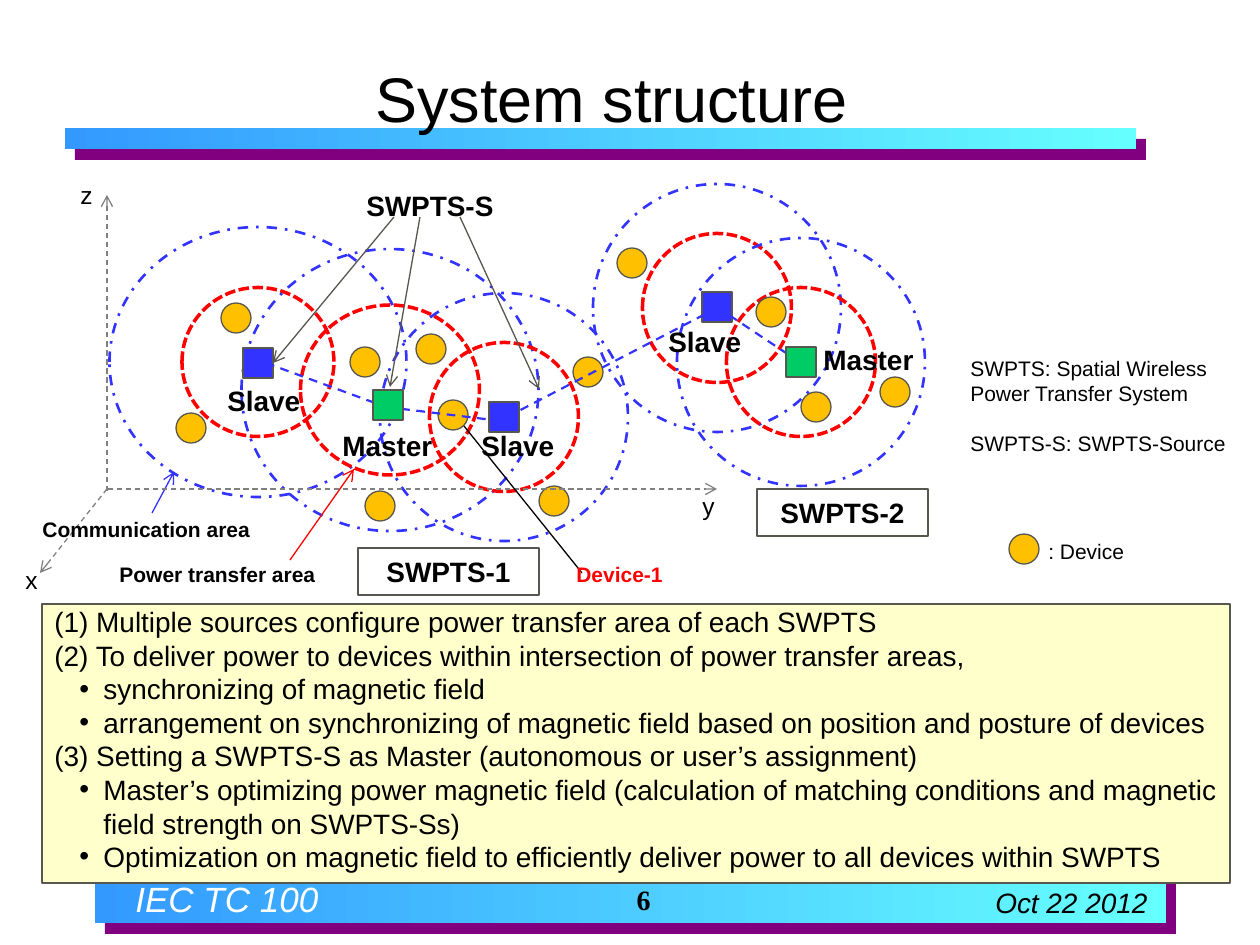
from pptx import Presentation
from pptx.dml.color import RGBColor
from pptx.enum.dml import MSO_LINE
from pptx.enum.shapes import MSO_CONNECTOR, MSO_SHAPE
from pptx.enum.text import MSO_ANCHOR, PP_ALIGN
from pptx.oxml.ns import qn
from pptx.util import Emu, Pt
from lxml.etree import SubElement

PX = 914400 / 126
COLORS = {
    "purple": "800080", "sky": "3399FF", "aqua": "66FFFF", "white": "FFFFFF",
    "black": "000000", "cream": "FFFFCC", "outline": "57564F", "red": "FF0000",
    "blue": "3333FF", "green": "00CC66", "amber": "FFC000", "gray": "808080",
}
RGB = {name: RGBColor.from_string(value) for name, value in COLORS.items()}
RECT, OVAL = MSO_SHAPE.RECTANGLE, MSO_SHAPE.OVAL

presentation = Presentation()
presentation.slide_width = Emu(round(1260 * PX))
presentation.slide_height = Emu(round(945 * PX))
slide = presentation.slides.add_slide(presentation.slide_layouts[6])


def add_box(kind, x, y, width, height, fill=None, line=None, weight=0.75, dash=None):
    """Add a preset shape, or a text box when kind is None; lengths in px."""
    bounds = [Emu(round(value * PX)) for value in (x, y, width, height)]
    if kind is None:
        return slide.shapes.add_textbox(*bounds)
    shape = slide.shapes.add_shape(kind, *bounds)
    shape.shadow.inherit = False
    if fill:
        shape.fill.solid()
        shape.fill.fore_color.rgb = RGB[fill]
    else:
        shape.fill.background()
    if line:
        shape.line.color.rgb = RGB[line]
        shape.line.width = Pt(weight)
        shape.line.dash_style = dash
    else:
        shape.line.fill.background()
    return shape


def write_text(shape, text, size, color="black", bold=False, italic=False, wrap=True,
               align=PP_ALIGN.LEFT, anchor=MSO_ANCHOR.TOP, spacing=None, font="Arial"):
    frame = shape.text_frame
    frame.text = text
    frame.word_wrap = wrap
    frame.vertical_anchor = anchor
    for paragraph in frame.paragraphs:
        paragraph.alignment = align
        paragraph.line_spacing = spacing
        for run in paragraph.runs:
            run.font.name, run.font.size = font, Pt(size)
            run.font.bold, run.font.italic = bold, italic
            run.font.color.rgb = RGB[color]
    return frame


# Title and footer bands, each with an offset purple bar behind
for x, y, height in [(65, 128, 21), (95, 871, 52)]:
    add_box(RECT, x + 10, y + 11, 1071, height, "purple")
    band = add_box(RECT, x, y, 1071, height, "sky")
    band.fill.gradient()
    band.fill.gradient_angle = 0
    for stop, color in zip(band.fill.gradient_stops, ("sky", "aqua")):
        stop.color.rgb = RGB[color]

# Footer texts and title
write_text(add_box(None, 123, 871, 428, 55), "IEC TC 100", 20, "white", italic=True)
write_text(add_box(None, 983, 868, 203, 63), "Oct 22 2012", 16, italic=True,
           wrap=False, anchor=MSO_ANCHOR.MIDDLE, spacing=1.2)
write_text(add_box(None, 610, 874, 67, 50), "6", 16, bold=True, wrap=False,
           align=PP_ALIGN.CENTER, anchor=MSO_ANCHOR.MIDDLE, font="Times New Roman")
write_text(add_box(None, 173, 52, 877, 89), "System structure", 36,
           align=PP_ALIGN.CENTER, anchor=MSO_ANCHOR.BOTTOM)

# Explanation panel
points = [
    (False, "(1) Multiple sources configure power transfer area of each SWPTS"),
    (False, "(2) To deliver power to devices within intersection of power transfer areas,"),
    (True, "synchronizing of magnetic field"),
    (True, "arrangement on synchronizing of magnetic field based on position and posture of devices"),
    (False, "(3) Setting a SWPTS-S as Master (autonomous or user’s assignment)"),
    (True, "Master’s optimizing power magnetic field (calculation of matching conditions "
           "and magnetic field strength on SWPTS-Ss)"),
    (True, "Optimization on magnetic field to efficiently deliver power to all devices within SWPTS"),
]
panel = add_box(RECT, 42, 604, 1188, 279, "cream", "outline")
frame = write_text(panel, "\n".join(text for _, text in points), 16, spacing=Pt(19.2))
frame.paragraphs[0].line_spacing = Pt(16)
for paragraph, (bulleted, _) in zip(frame.paragraphs, points):
    if bulleted:
        properties = paragraph._p.get_or_add_pPr()
        properties.set("marL", str(round(49 * PX)))
        properties.set("indent", str(round(-24 * PX)))
        SubElement(properties, qn("a:buFont"), typeface="Arial")
        SubElement(properties, qn("a:buChar"), char="•")

# Power transfer (red) and communication (blue) areas: centre x, y, then both sizes
areas = [
    (258, 362, 152, 149, 297, 270),
    (390, 390, 179, 170, 297, 282),
    (504, 417, 149, 149, 248, 248),
    (717, 308, 149, 149, 248, 248),
    (801, 362, 149, 149, 248, 248),
]
for x, y, power_width, power_height, reach_width, reach_height in areas:
    add_box(OVAL, x - power_width / 2, y - power_height / 2, power_width, power_height,
            None, "red", 2, MSO_LINE.SQUARE_DOT)
    add_box(OVAL, x - reach_width / 2, y - reach_height / 2, reach_width, reach_height,
            None, "blue", 1.5, MSO_LINE.DASH_DOT)

# Slave sources
slaves = [add_box(RECT, x - 15, y - 15, 30, 30, "blue", "outline")
          for x, y in [(258, 363), (504, 417), (717, 307)]]

# Devices, the last one being the legend key
devices = [(380, 506), (191, 428), (236, 318), (365, 362), (588, 372), (554, 501),
           (453, 415), (771, 312), (632, 263), (816, 407), (895, 392), (431, 349),
           (1024, 549)]
for x, y in devices:
    add_box(OVAL, x - 15, y - 15, 30, 30, "amber", "outline")

# Lines: start, end, colour, weight, dashed, arrow
lines = [
    (152, 513, 174, 472, "blue", 0.75, False, True),
    (290, 560, 354, 469, "red", 0.75, False, True),
    (394, 217, 273, 363, "outline", 0.75, False, True),
    (420, 217, 390, 387, "outline", 0.75, False, True),
    (460, 217, 539, 389, "outline", 0.75, False, True),
    (266, 363, 386, 407, "blue", 1.25, True, False),
    (386, 407, 509, 422, "blue", 1.25, True, False),
    (507, 417, 719, 307, "blue", 1.25, True, False),
    (717, 307, 801, 363, "blue", 1.25, True, False),
    (107, 491, 107, 195, "gray", 0.75, True, True),
    (107, 489, 40, 573, "gray", 0.75, True, True),
    (108, 489, 717, 489, "gray", 0.75, True, True),
    (464, 426, 582, 573, "black", 0.75, False, False),
]
connectors = []
for *ends, color, weight, dashed, arrow in lines:
    connector = slide.shapes.add_connector(
        MSO_CONNECTOR.STRAIGHT, *[Emu(round(value * PX)) for value in ends])
    connector.line.color.rgb = RGB[color]
    connector.line.width = Pt(weight)
    if dashed:
        connector.line.dash_style = MSO_LINE.DASH
    if arrow:
        SubElement(connector.line._get_or_add_ln(), qn("a:tailEnd"), type="arrow")
    SubElement(connector._element.spPr, qn("a:effectLst"))
    connectors.append(connector)
connectors[2].end_connect(slaves[0], 3)

# Master sources lie over the links
for x, y in [(388, 405), (801, 362)]:
    add_box(RECT, x - 15, y - 15, 30, 30, "green", "outline")

# Source labels
for text, x, y, width in [("SWPTS-S", 354, 182, 154), ("Master", 330, 422, 117),
                          ("Slave", 215, 377, 100), ("Slave", 469, 422, 100),
                          ("Slave", 656, 318, 100), ("Master", 811, 336, 117)]:
    write_text(add_box(None, x, y, width, 47), text, 16, bold=True, wrap=False)

# Area and device labels
for text, x, y, width, color in [("Communication area", 30, 508, 236, "black"),
                                 ("Power transfer area", 107, 553, 223, "black"),
                                 ("Device-1", 564, 553, 112, "red")]:
    write_text(add_box(None, x, y, width, 39), text, 12, color, bold=True,
               wrap=False, spacing=Pt(16))

# System names
for text, x, y, width in [("SWPTS-1", 358, 548, 181), ("SWPTS-2", 757, 489, 171)]:
    write_text(add_box(RECT, x, y, width, 47, None, "outline"), text, 16, bold=True,
               align=PP_ALIGN.CENTER)

# Axis names
for text, x, y in [("x", 13, 559), ("z", 68, 174), ("y", 690, 485)]:
    write_text(add_box(None, x, y, 60, 43), text, 14)

# Legend
write_text(add_box(None, 1036, 530, 165, 42), ": Device", 12, spacing=Pt(16))
frame = write_text(add_box(None, 958, 349, 290, 115),
                   "SWPTS: Spatial Wireless Power Transfer System\nSWPTS-S: SWPTS-Source",
                   12, spacing=Pt(14.4))
frame.paragraphs[1].space_before = Pt(14.4)

presentation.save("out.pptx")
